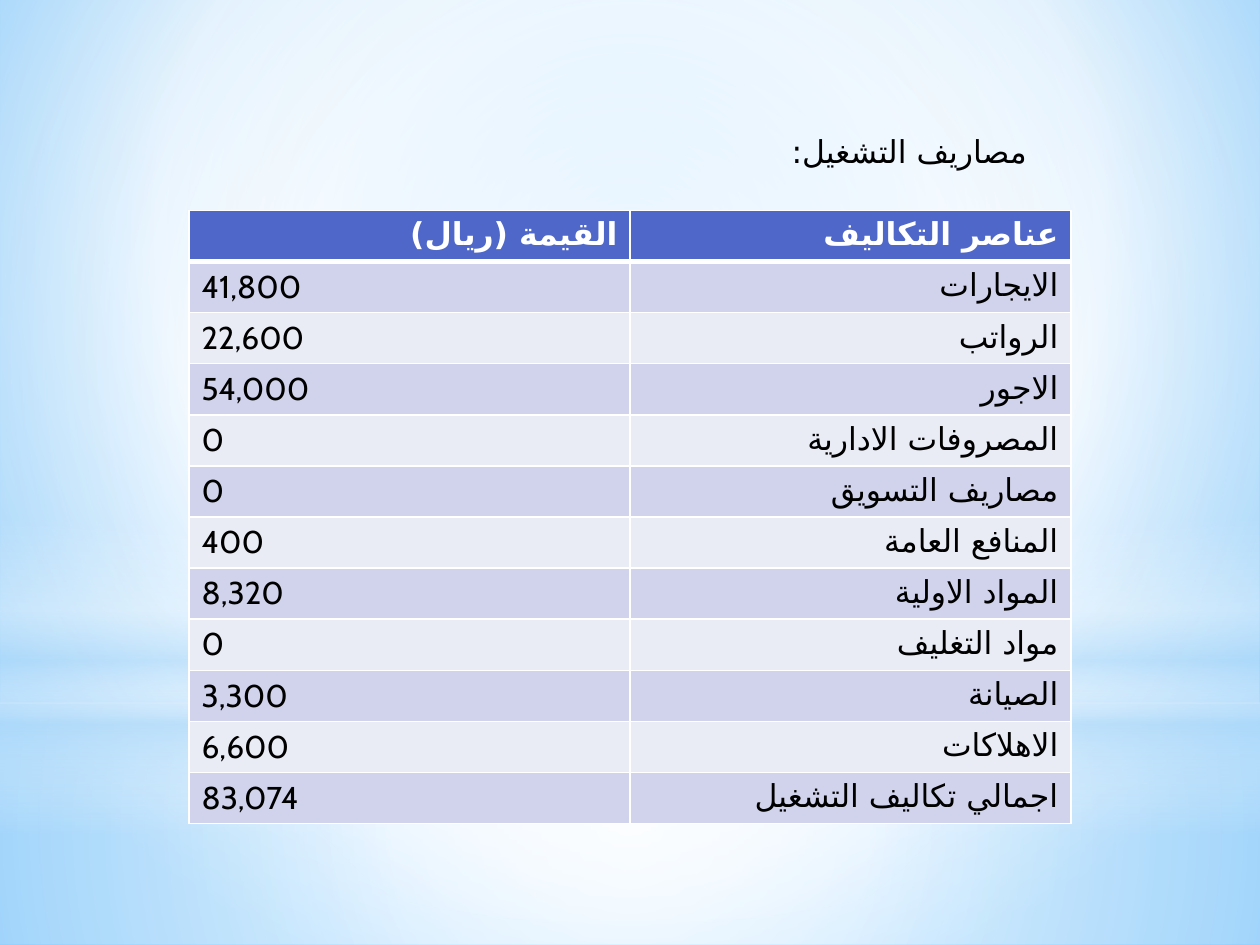
"""Build a slide with a table of operating costs."""
from dataclasses import dataclass

from pptx import Presentation, util as u
from pptx.dml.color import RGBColor
from pptx.enum import shapes, text
from pptx.oxml import ns, xmlchemy as xml


@dataclass(frozen=True)
class Theme:
    font: str = "Cabin"
    script: str = "DejaVu Sans"
    size: int = 18
    ink: str = "000000"
    white: str = "FFFFFF"
    sky: str = "B4DCFA"
    pale: str = "9ED5FF"
    deep: str = "5BB9FF"
    head: str = "4E67C8"
    bands: tuple = ("D0D3EB", "E9EBF5")
    line: int = 1
    rule: int = 3


THEME = Theme()
MID = (50, 50, 50, 50)
TITLE = "مصاريف التشغيل:"
HEADS = ("القيمة (ريال)", "عناصر التكاليف")
COSTS = (
    ("41,800", "الايجارات"),
    ("22,600", "الرواتب"),
    ("54,000", "الاجور"),
    ("0", "المصروفات الادارية"),
    ("0", "مصاريف التسويق"),
    ("400", "المنافع العامة"),
    ("8,320", "المواد الاولية"),
    ("0", "مواد التغليف"),
    ("3,300", "الصيانة"),
    ("6,600", "الاهلاكات"),
    ("83,074", "اجمالي تكاليف التشغيل"),
)


def add_node(host, tag, **attrs):
    """Append a drawing element with the given attributes."""
    node = xml.OxmlElement(tag)
    for key, val in attrs.items():
        node.set(key, str(val))
    host.append(node)
    return node


def set_grad(fill, host, stops, focus=None):
    """Fill with (place, colour, opacity) stops, round a focus or downward."""
    fill.gradient()
    grad = next(host.iter(ns.qn("a:gradFill")))
    for node in list(grad):
        grad.remove(node)
    row = add_node(grad, "a:gsLst")
    for place, tone, alpha in stops:
        stop = add_node(row, "a:gs", pos=place * 1000)
        tint = add_node(stop, "a:srgbClr", val=tone)
        if alpha < 100:
            add_node(tint, "a:alpha", val=alpha * 1000)
    if focus:
        ring = add_node(grad, "a:path", path="circle")
        sides = {side: val * 1000 for side, val in zip("ltrb", focus)}
        add_node(ring, "a:fillToRect", **sides)
    else:
        add_node(grad, "a:lin", ang=90 * 60000, scaled=0)


def add_glow(slide, kind, box, stops, focus=None):
    """Add a borderless shape with a soft gradient."""
    shape = slide.shapes.add_shape(kind, *map(u.Inches, box))
    shape.shadow.inherit = False
    shape.line.fill.background()
    set_grad(shape.fill, shape.element.spPr, stops, focus)


def add_scene(slide):
    """Paint the sky background and its layers of light."""
    t, kind = THEME, shapes.MSO_SHAPE
    back = slide.background
    sky = [(0, t.pale, 100), (60, t.white, 100), (100, t.deep, 100)]
    set_grad(back.fill, slide.element, sky, (20, 10, 20, 60))
    low = [(0, t.white, 91), (37, t.white, 76), (100, t.sky, 79)]
    high = [(0, t.white, 89), (48, t.white, 62), (100, t.sky, 79)]
    haze = [(0, t.white, 0), (29, t.white, 30), (45, t.sky, 40),
            (55, t.white, 26), (65, t.sky, 60), (100, t.white, 0)]
    sun = [(0, t.white, 100), (56, t.white, 0)]
    add_glow(slide, kind.RECTANGLE, (0, 5.58, 10, 1.92), low, MID)
    add_glow(slide, kind.RECTANGLE, (0, 0, 10, 5.58), high, MID)
    add_glow(slide, kind.RECTANGLE, (0, 4.12, 10, 2.5), haze)
    add_glow(slide, kind.OVAL, (0, 1.75, 10, 5.58), sun, MID)


def add_run(frame, words, tone, bold=False, rtl=True):
    """Write one run, set from the right for Arabic."""
    para = frame.paragraphs[0]
    para.alignment = text.PP_ALIGN.RIGHT if rtl else text.PP_ALIGN.LEFT
    run = para.add_run()
    run.text = words
    font = run.font
    font.name, font.size, font.bold = THEME.font, u.Pt(THEME.size), bold
    font.color.rgb = RGBColor.from_string(tone)
    if rtl:
        para._p.get_or_add_pPr().set("rtl", "1")
        props = run._r.get_or_add_rPr()
        props.set("lang", "ar-SA")
        add_node(props, "a:cs", typeface=THEME.script)


def set_cell(cell, tone, top, base):
    """Give a cell its fill and white borders."""
    props = cell._tc.get_or_add_tcPr()
    for side, width in zip("LRTB", (THEME.line, THEME.line, top, base)):
        line = add_node(props, f"a:ln{side}", w=u.Pt(width))
        add_node(add_node(line, "a:solidFill"), "a:srgbClr", val=THEME.white)
    cell.fill.solid()
    cell.fill.fore_color.rgb = RGBColor.from_string(tone)


def add_costs(slide):
    """Add the table of costs with a header and banded rows."""
    rows = (HEADS, *COSTS)
    box = map(u.Inches, (1.5, 1.67, 7, 4.87))
    table = slide.shapes.add_table(len(rows), len(HEADS), *box).table
    for r, row in enumerate(rows):
        head = r == 0
        fill = THEME.head if head else THEME.bands[(r - 1) % 2]
        top = THEME.rule if r == 1 else THEME.line
        base = THEME.rule if head else THEME.line
        for c, words in enumerate(row):
            cell = table.cell(r, c)
            set_cell(cell, fill, top, base)
            tone = THEME.white if head else THEME.ink
            add_run(cell.text_frame, words, tone, head, head or c == 1)


def add_title(slide):
    """Add the heading above the table."""
    box = slide.shapes.add_textbox(*map(u.Inches, (4.92, 1, 3.33, 0.4)))
    frame = box.text_frame
    frame.word_wrap = True
    frame.auto_size = text.MSO_AUTO_SIZE.SHAPE_TO_FIT_TEXT
    add_run(frame, TITLE, THEME.ink)


def main():
    """Build and save the slide."""
    deck = Presentation()
    deck.slide_width, deck.slide_height = u.Inches(10), u.Inches(7.5)
    slide = deck.slides.add_slide(deck.slide_layouts.get_by_name("Blank"))
    add_scene(slide)
    add_costs(slide)
    add_title(slide)
    deck.save("out.pptx")


if __name__ == "__main__":
    main()
